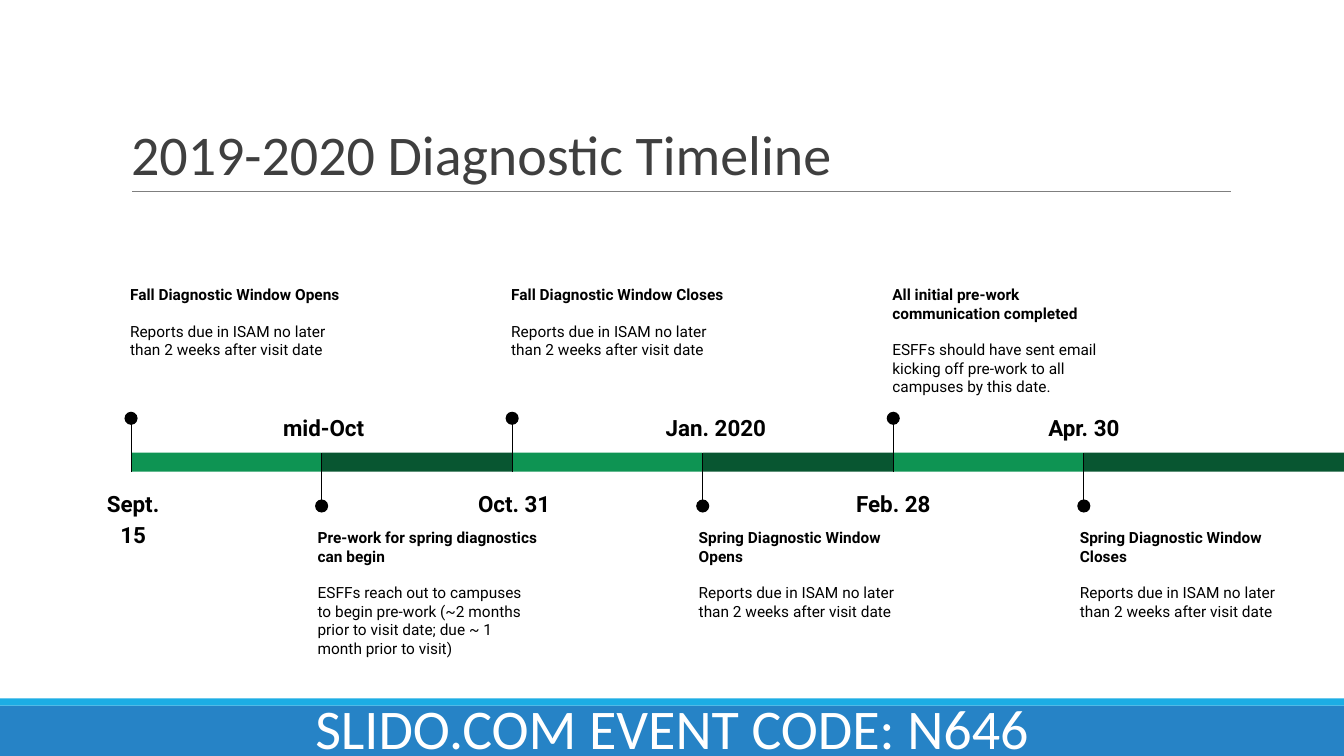
from dataclasses import dataclass

from lxml import etree
from pptx import Presentation
from pptx.dml.color import RGBColor
from pptx.enum.shapes import MSO_CONNECTOR, MSO_SHAPE
from pptx.enum.text import MSO_ANCHOR, MSO_AUTO_SIZE, PP_ALIGN
from pptx.oxml.ns import qn
from pptx.util import Inches, Pt

STRAIGHT = MSO_CONNECTOR.STRAIGHT
RECTANGLE, OVAL = MSO_SHAPE.RECTANGLE, MSO_SHAPE.OVAL
TOP, BOTTOM = MSO_ANCHOR.TOP, MSO_ANCHOR.BOTTOM
NO_FIT = MSO_AUTO_SIZE.NONE
LEFT, CENTER = PP_ALIGN.LEFT, PP_ALIGN.CENTER

PAGE_WIDTH, PAGE_HEIGHT = 13.33, 7.5
BLACK, WHITE = "000000", "FFFFFF"
BAR_COLOURS = ("0E9453", "085631")
BAR_HEIGHT, STEP, DOT = 0.19, 1.89, 0.13
REPORTS_DUE = "Reports due in ISAM no later than 2 weeks after visit date"


@dataclass
class Milestone:
    """A date on the timeline with its heading and details."""
    date: str
    heading: str
    details: str
    date_width: float = 1.09
    date_shift: float = 0.0


MILESTONES = [
    Milestone("Sept. 15", "Fall Diagnostic Window Opens", REPORTS_DUE, 1.01, 0.02),
    Milestone("mid-Oct", "Pre-work for spring diagnostics can begin",
              "ESFFs reach out to campuses to begin pre-work (~2 months prior "
              "to visit date; due ~ 1 month prior to visit)", 1.09, 0.02),
    Milestone("Oct. 31", "Fall Diagnostic Window Closes", REPORTS_DUE, 1.01, 0.02),
    Milestone("Jan. 2020", "Spring Diagnostic Window Opens", REPORTS_DUE, 1.35, 0.13),
    Milestone("Feb. 28", "All initial pre-work communication completed",
              "ESFFs should have sent email kicking off pre-work to all "
              "campuses by this date."),
    Milestone("Apr. 30", "Spring Diagnostic Window Closes", REPORTS_DUE),
]


def colour(value):
    """Turn a hex string into a colour."""
    return RGBColor.from_string(value)


def add_block(page, kind, box, fill):
    """Add a plain filled shape without outline."""
    shape = page.shapes.add_shape(kind, *map(Inches, box))
    shape.shadow.inherit = False
    shape.fill.solid()
    shape.fill.fore_color.rgb = colour(fill)
    shape.line.fill.background()


def add_line(page, start, end, stroke):
    """Add a thin straight line."""
    line = page.shapes.add_connector(STRAIGHT, *map(Inches, start + end))
    line.line.color.rgb = colour(stroke)
    line.line.width = Pt(0.75)
    etree.SubElement(line._element.spPr, qn("a:effectLst"))


def set_frame(frame, inset_x, inset_y, anchor=TOP):
    """Set wrapping, insets and anchor of a text frame."""
    frame.word_wrap = True
    frame.auto_size = NO_FIT
    frame.vertical_anchor = anchor
    frame.margin_left = frame.margin_right = Inches(inset_x)
    frame.margin_top = frame.margin_bottom = Inches(inset_y)


def add_text_box(page, box, inset_x, inset_y):
    """Add an empty text box and return its frame."""
    frame = page.shapes.add_textbox(*map(Inches, box)).text_frame
    set_frame(frame, inset_x, inset_y)
    return frame


def write(para, text, size, font, ink, bold=False, align=LEFT):
    """Write one formatted run into a paragraph."""
    para.alignment = align
    span = para.add_run()
    span.text = text
    span.font.size = Pt(size)
    span.font.name = font
    span.font.bold = bold
    span.font.color.rgb = colour(ink)


def add_title(page, box):
    """Place the title and the rule beneath it."""
    left, top, width, height = box
    title = page.shapes.title
    title.left, title.top, title.width, title.height = map(Inches, box)
    set_frame(title.text_frame, 0.1, 0.05, BOTTOM)
    para = title.text_frame.paragraphs[0]
    para.line_spacing = 0.85
    write(para, "2019-2020 Diagnostic Timeline", 40, "Calibri", "3F3F3F")
    rule_left, rule_top = left + 0.11, top + height
    add_line(page, (rule_left, rule_top), (rule_left + 10.9, rule_top), "7F7F7F")


def add_date(page, box, text):
    """Add a milestone date."""
    para = add_text_box(page, box, 0.13, 0.13).paragraphs[0]
    para.line_spacing = 1.15
    write(para, text, 16, "Roboto", BLACK, True, CENTER)


def add_note(page, box, milestone):
    """Add the heading and details of a milestone."""
    frame = add_text_box(page, box, 0.13, 0.13)
    write(frame.paragraphs[0], milestone.heading, 11, "Roboto", BLACK, True)
    para = frame.add_paragraph()
    para.space_before = Pt(13)
    write(para, milestone.details, 11, "Roboto", BLACK)


def add_milestone(page, box, milestone, above, fill):
    """Add a bar segment with its pin, date and note."""
    left, top, width, height = box
    add_block(page, RECTANGLE, box, fill)
    if above:
        dot_y, pin_end = top - 0.34, top + height
        date_top, note_left, note_top = top + 0.2, left - 0.14, top - 1.79
    else:
        dot_y, pin_end = top + 0.53, top
        date_top, note_left, note_top = top - 0.55, left - 0.17, top + 0.62
    add_line(page, (left, dot_y), (left, pin_end), BLACK)
    add_block(page, OVAL, (left - DOT / 2, dot_y - DOT / 2, DOT, DOT), BLACK)
    date_left = left + milestone.date_shift - milestone.date_width / 2
    add_date(page, (date_left, date_top, milestone.date_width, 0.54), milestone.date)
    add_note(page, (note_left, note_top, 2.45, 1.38), milestone)


def add_timeline(page, left, top):
    """Add all milestones, with the last bar reaching the page edge."""
    for index, milestone in enumerate(MILESTONES):
        start = left + index * STEP
        last = index == len(MILESTONES) - 1
        width = PAGE_WIDTH - start if last else STEP
        add_milestone(page, (start, top, width, BAR_HEIGHT), milestone,
                      index % 2 == 0, BAR_COLOURS[index % 2])


def add_footer(page, box):
    """Add the footer band, its stripe and the event code."""
    left, top, width, height = box
    add_block(page, RECTANGLE, box, "2683C6")
    add_block(page, RECTANGLE, (left, top - 0.07, width, 0.07), "1CADE4")
    frame = add_text_box(page, (left, top - 0.17, width, 0.77), 0.1, 0.05)
    write(frame.paragraphs[0], "SLIDO.COM EVENT CODE: N646", 40, "Calibri",
          WHITE, align=CENTER)


def main():
    """Build and save the deck."""
    deck = Presentation()
    deck.slide_width, deck.slide_height = Inches(PAGE_WIDTH), Inches(PAGE_HEIGHT)
    page = deck.slides.add_slide(deck.slide_layouts[5])
    add_title(page, (1.2, 0.31, 11, 1.59))
    add_timeline(page, 1.3, 4.49)
    add_footer(page, (0, 7, PAGE_WIDTH, 0.5))
    deck.save("out.pptx")


if __name__ == "__main__":
    main()
